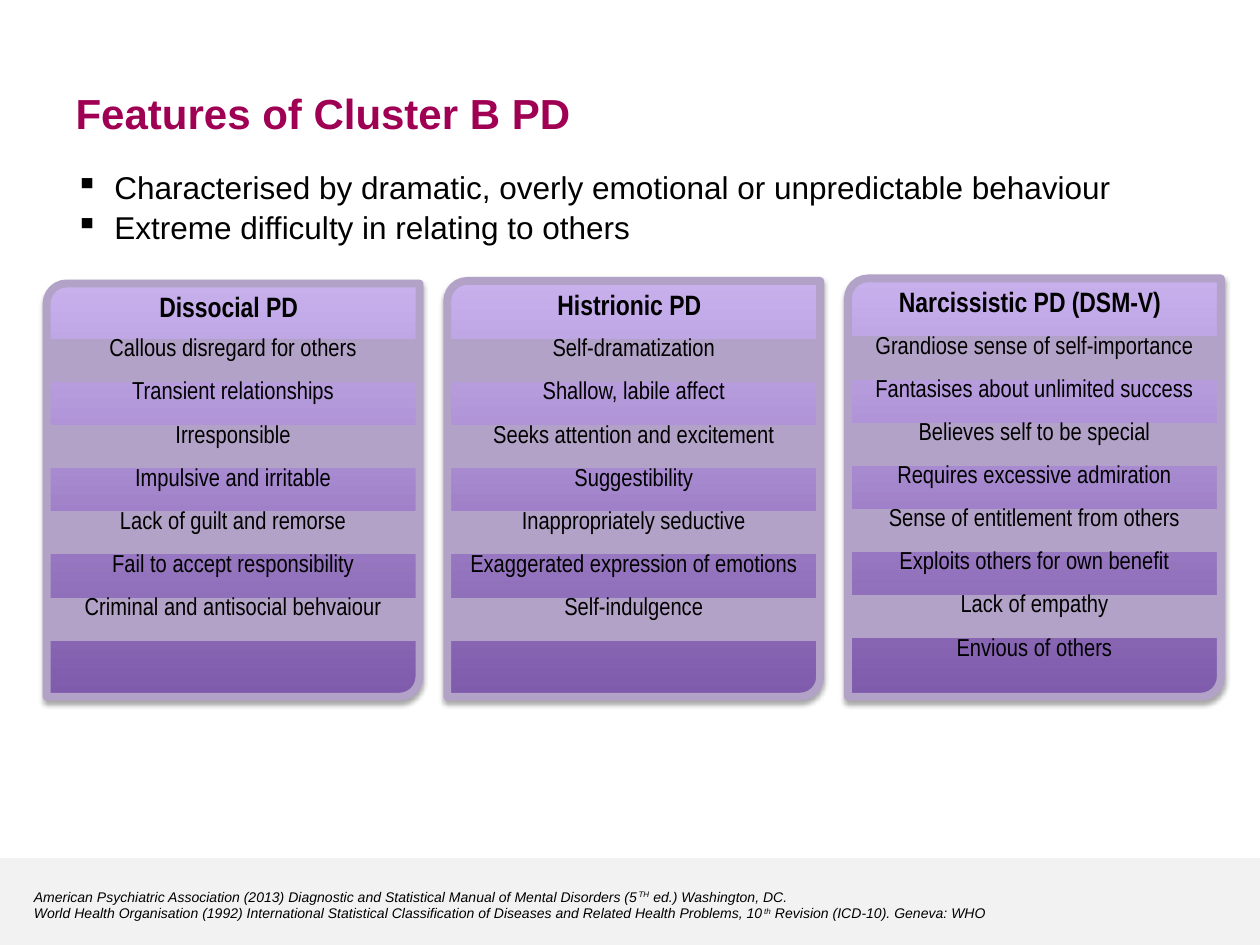
from dataclasses import dataclass

from lxml.etree import SubElement
from pptx import Presentation
from pptx.dml.color import RGBColor
from pptx.enum.shapes import MSO_SHAPE
from pptx.enum.text import MSO_ANCHOR, PP_ALIGN
from pptx.oxml.ns import qn
from pptx.util import Inches, Pt


@dataclass(frozen=True)
class Theme:
    sans: str = "Arial"
    narrow: str = "Arial Narrow"
    title: str = "A00054"
    ink: str = "000000"
    band: str = "F2F2F2"
    mauve: str = "B3A2C7"
    dark: str = "7F5BAB"
    light: str = "C8B0ED"
    title_size: int = 24
    body_size: int = 18
    head_size: int = 16
    row_size: int = 14
    note_size: int = 8


THEME = Theme()
NO_GRID = "{2D5ABB26-0587-4C30-8999-92F81FD0307C}"
LEFT, TOP, PITCH, STEP = 0.37, 2.25, 3.18, 0.02
WIDTH, BOTTOM = 2.96, 5.53
ROW_COUNT, GRID_HEIGHT = 8, 2.74

POINTS = [
    "Characterised by dramatic, overly emotional or unpredictable behaviour",
    "Extreme difficulty in relating to others",
]
# Each card: heading, top of its grid, rows
CARDS = [
    ("Dissocial PD", 2.69, [
        "Callous disregard for others", "Transient relationships",
        "Irresponsible", "Impulsive and irritable",
        "Lack of guilt and remorse", "Fail to accept responsibility",
        "Criminal and antisocial behvaiour"]),
    ("Histrionic PD", 2.69, [
        "Self-dramatization", "Shallow, labile affect",
        "Seeks attention and excitement", "Suggestibility",
        "Inappropriately seductive", "Exaggerated expression of emotions",
        "Self-indulgence"]),
    ("Narcissistic PD (DSM-V)", 2.67, [
        "Grandiose sense of self-importance",
        "Fantasises about unlimited success", "Believes self to be special",
        "Requires excessive admiration", "Sense of entitlement from others",
        "Exploits others for own benefit", "Lack of empathy",
        "Envious of others"]),
]
# Each source: text before, superscript, text after
SOURCES = [
    ("American Psychiatric Association (2013) Diagnostic and Statistical "
     "Manual of Mental Disorders (5", "TH", " ed.) Washington, DC."),
    ("World Health Organisation (1992) International Statistical "
     "Classification of Diseases and Related Health Problems, 10", "th",
     " Revision (ICD-10). Geneva: WHO"),
]


def color(code):
    return RGBColor.from_string(code)


def style(para, size, face=THEME.sans, ink=THEME.ink, bold=False, italic=False):
    for run in para.runs:
        font = run.font
        font.size, font.name = Pt(size), face
        font.bold, font.italic = bold, italic
        font.color.rgb = color(ink)


def add_text(slide, box, lines):
    """Add a wrapping text box and return its paragraphs."""
    frame = slide.shapes.add_textbox(*map(Inches, box)).text_frame
    frame.word_wrap = True
    frame.text = "\n".join(lines)
    return frame.paragraphs


def add_title(slide, text):
    title = slide.shapes.title
    title.left, title.top = Inches(0.5), Inches(0.62)
    title.width, title.height = Inches(8.5), Inches(0.55)
    frame = title.text_frame
    frame.text = text
    frame.vertical_anchor = MSO_ANCHOR.MIDDLE
    para = frame.paragraphs[0]
    para.alignment = PP_ALIGN.LEFT
    style(para, THEME.title_size, ink=THEME.title, bold=True)


def add_points(slide):
    for para in add_text(slide, (0.5, 1.27, 9.2, 0.71), POINTS):
        props = para._p.get_or_add_pPr()
        props.set("marL", str(Inches(0.31)))
        props.set("indent", str(Inches(-0.31)))
        para.line_spacing = 1.05
        SubElement(props, qn("a:buChar"), char="▪")
        style(para, THEME.body_size)


def add_shadow(shape):
    shape.shadow.inherit = False
    effects = shape._element.spPr.find(qn("a:effectLst"))
    outer = SubElement(effects, qn("a:outerShdw"), blurRad=str(Pt(3.1)),
                       dist=str(Pt(1.8)), dir="5400000", rotWithShape="0")
    tint = SubElement(outer, qn("a:srgbClr"), val=THEME.ink)
    SubElement(tint, qn("a:alpha"), val="35000")


def add_panel(slide, left, top):
    box = map(Inches, (left, top, WIDTH, BOTTOM - top))
    panel = slide.shapes.add_shape(MSO_SHAPE.ROUND_2_DIAG_RECTANGLE, *box)
    panel.adjustments[0], panel.adjustments[1] = 0.054, 0
    fill = panel.fill
    fill.gradient()
    fill.gradient_angle = 90
    shades = (THEME.dark, THEME.light)
    for stop, place, shade in zip(fill.gradient_stops, (0, 1), shades):
        stop.position = place
        stop.color.rgb = color(shade)
    panel.line.color.rgb = color(THEME.mauve)
    panel.line.width = Pt(4.5)
    add_shadow(panel)


def add_grid(slide, left, top, rows):
    """Add a one-column table whose even rows let the panel show through."""
    box = map(Inches, (left, top, WIDTH, GRID_HEIGHT))
    table = slide.shapes.add_table(ROW_COUNT, 1, *box).table
    table.first_row = table.horz_banding = False
    table._tbl.tblPr.find(qn("a:tableStyleId")).text = NO_GRID
    for index in range(ROW_COUNT):
        cell = table.cell(index, 0)
        cell.margin_top = cell.margin_bottom = 0
        if index % 2:
            cell.fill.background()
        else:
            cell.fill.solid()
            cell.fill.fore_color.rgb = color(THEME.mauve)
        if index < len(rows):
            cell.text_frame.text = rows[index]
            para = cell.text_frame.paragraphs[0]
            para.alignment = PP_ALIGN.CENTER
            style(para, THEME.row_size, THEME.narrow)


def add_card(slide, index, head, grid_top, rows):
    left, top = LEFT + index * PITCH, TOP - index * STEP
    add_panel(slide, left, top)
    para = add_text(slide, (left, top, 2.89, 0.4), [head])[0]
    para.alignment = PP_ALIGN.CENTER
    style(para, THEME.head_size, THEME.narrow, bold=True)
    add_grid(slide, left, grid_top, rows)


def add_footer(slide):
    box = map(Inches, (0, 6.81, 10, 0.69))
    band = slide.shapes.add_shape(MSO_SHAPE.RECTANGLE, *box)
    band.shadow.inherit = False
    band.fill.solid()
    band.fill.fore_color.rgb = color(THEME.band)
    band.line.fill.background()
    paras = add_text(slide, (0.17, 7, 8.36, 0.37), [s[0] for s in SOURCES])
    for para, (_, power, rest) in zip(paras, SOURCES):
        raised = para.add_run()
        raised.text = power
        raised._r.get_or_add_rPr().set("baseline", "30000")
        para.add_run().text = rest
        style(para, THEME.note_size, italic=True)


def main():
    deck = Presentation()
    deck.slide_width, deck.slide_height = Inches(10), Inches(7.5)
    slide = deck.slides.add_slide(deck.slide_layouts[5])
    add_title(slide, "Features of Cluster B PD")
    add_footer(slide)
    for index, card in enumerate(CARDS):
        add_card(slide, index, *card)
    add_points(slide)
    deck.save("out.pptx")


if __name__ == "__main__":
    main()
